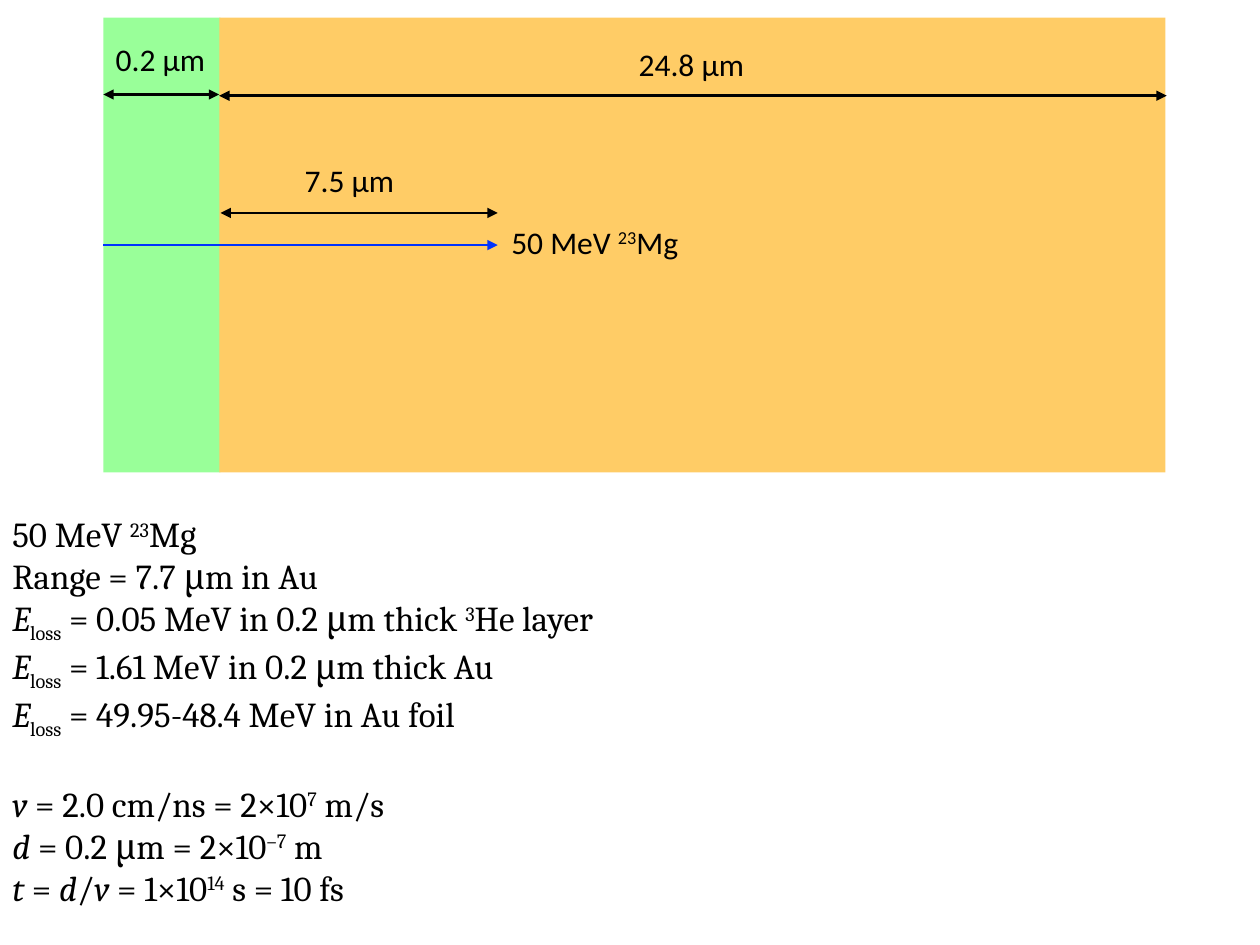
from lxml.etree import SubElement
from pptx import Presentation
from pptx.dml.color import RGBColor as RGB
from pptx.enum.shapes import MSO_CONNECTOR as Line, MSO_SHAPE as Shape
from pptx.enum.text import MSO_AUTO_SIZE as Fit
from pptx.oxml.ns import qn
from pptx.util import Inches, Pt

THEME = {
    "helium": "99FF99", "gold": "FFCC66", "beam": "0033FF", "ink": "000000",
    "label": {"name": "Calibri", "size": Pt(18)},
    "notes": {"name": "Cambria", "size": Pt(20)},
    "line": Pt(1.5), "gap": Pt(24),
}

# Layers: name, left, width; both share one top and height
TOP, HIGH = 0.14, 3.61
LAYERS = [("helium", 0.82, 0.93), ("gold", 1.74, 7.51)]

# Spans: left, right, height on the slide
SPANS = [(0.82, 1.74, 0.75), (1.74, 9.26, 0.76), (1.75, 3.95, 1.69)]
BEAM_END = 3.95

# Runs are split by "|"; a leading ^ raises, _ lowers, * slants
ION = "50 MeV |^23|Mg"
LABELS = [
    ("0.2 μm", 0.82, 0.27, 0.92),
    ("24.8 μm", 4.97, 0.31, 1.05),
    ("7.5 μm", 2.32, 1.23, 0.92),
    (ION, 3.96, 1.72, 1.57),
]
LOSS = "*E|_loss| = "
ENERGY = [
    ION,
    "Range = 7.7 μm in Au",
    LOSS + "0.05 MeV in 0.2 μm thick |^3|He layer",
    LOSS + "1.61 MeV in 0.2 μm thick Au",
    LOSS + "49.95-48.4 MeV in Au foil",
]
TIMING = [
    "*v| = 2.0 cm/ns = 2×10|^7| m/s",
    "*d| = 0.2 μm = 2×10|^–7| m",
    "*t| = |*d|/|*v| = 1×10|^14| s = 10 fs",
]
SHIFT = {"^": "30000", "_": "-25000"}


def add_layer(slide, name, left, wide):
    box = slide.shapes.add_shape(
        Shape.RECTANGLE, *map(Inches, (left, TOP, wide, HIGH)))
    box.shadow.inherit = False
    box.fill.solid()
    box.fill.fore_color.rgb = RGB.from_string(THEME[name])
    box.line.fill.background()
    return box


def add_arrow(slide, left, right, y, color="ink", ends=("headEnd", "tailEnd")):
    arrow = slide.shapes.add_connector(
        Line.STRAIGHT, *map(Inches, (left, y, right, y)))
    arrow.line.width = THEME["line"]
    arrow.line.color.rgb = RGB.from_string(THEME[color])
    stroke = arrow.line._get_or_add_ln()
    for end in ends:
        SubElement(stroke, qn("a:" + end), type="triangle")
    SubElement(arrow._element.spPr, qn("a:effectLst"))
    return arrow


def add_runs(para, text, style):
    """Turn marked text into runs with the given font values."""
    for part in text.split("|"):
        mark = part[0] if part[0] in "^_*" else ""
        run = para.add_run()
        run.text = part[len(mark):]
        for key, value in style.items():
            setattr(run.font, key, value)
        run.font.color.rgb = RGB.from_string(THEME["ink"])
        if mark == "*":
            run.font.italic = True
        elif mark:
            run._r.get_or_add_rPr().set("baseline", SHIFT[mark])


def add_text(slide, lines, style, *place):
    frame = slide.shapes.add_textbox(*map(Inches, place)).text_frame
    frame.word_wrap = False
    frame.auto_size = Fit.SHAPE_TO_FIT_TEXT
    for i, text in enumerate(lines):
        para = frame.add_paragraph() if i else frame.paragraphs[0]
        add_runs(para, text, THEME[style])
    return frame


def main():
    deck = Presentation()
    deck.slide_width, deck.slide_height = Inches(10), Inches(7.5)
    slide = deck.slides.add_slide(deck.slide_layouts[6])

    helium, gold = [add_layer(slide, *layer) for layer in LAYERS]
    beam = add_arrow(slide, LAYERS[0][1], BEAM_END, TOP + HIGH / 2,
                     "beam", ["tailEnd"])
    beam.begin_connect(helium, 1)
    for span in SPANS:
        add_arrow(slide, *span)

    for text, left, top, wide in LABELS:
        add_text(slide, [text], "label", left, top, wide, 0.4)
    notes = add_text(slide, ENERGY + TIMING, "notes", 0, 4.02, 5.06, 3.13)
    notes.paragraphs[len(ENERGY)].space_before = THEME["gap"]

    deck.save("out.pptx")


if __name__ == "__main__":
    main()
